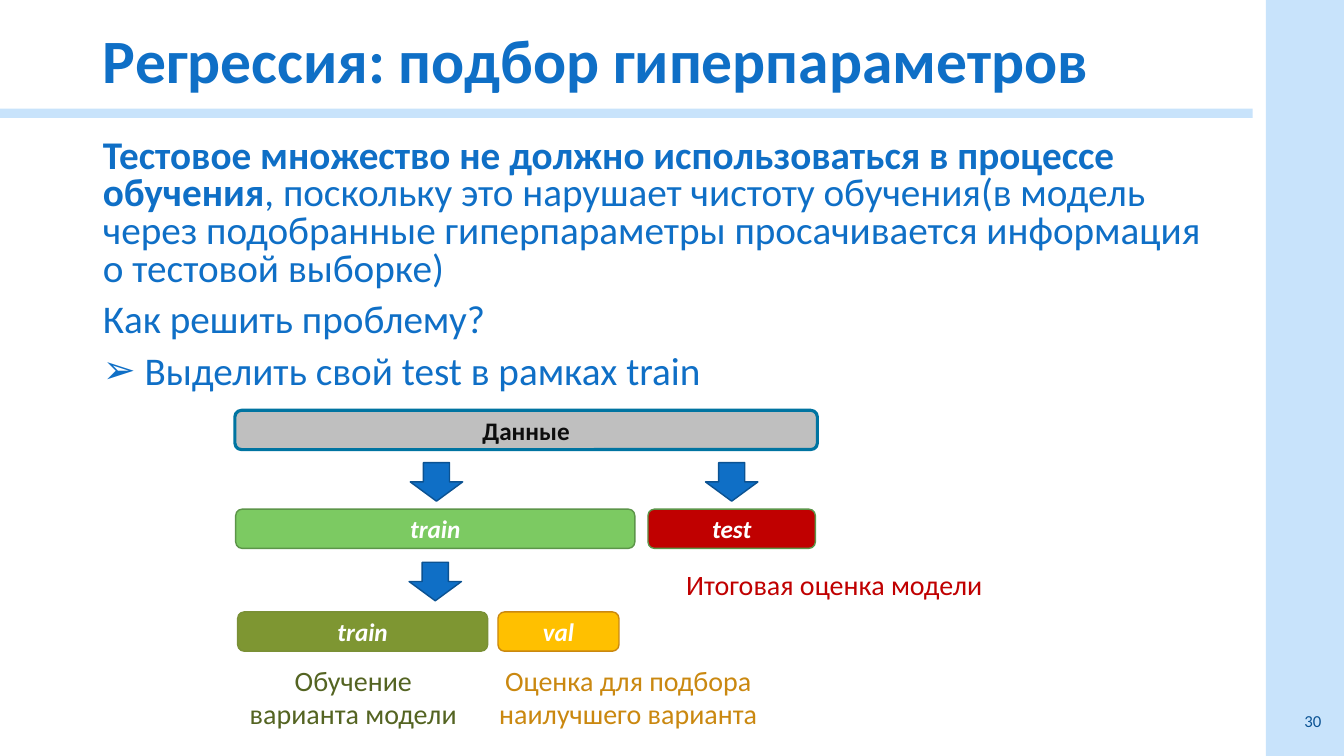
"""Builds a slide on choosing hyperparameters for regression."""
from dataclasses import dataclass

from lxml import etree
from pptx import Presentation
from pptx import util as u
from pptx.dml.color import RGBColor
from pptx.enum import shapes, text
from pptx.oxml.ns import qn


@dataclass(frozen=True)
class Theme:
    font: str = "Calibri"
    blue: str = "0F6FC6"
    blue_edge: str = "0B5292"
    number: str = "0B5394"
    band: str = "C8E3FB"
    white: str = "FFFFFF"
    ink: str = "0D0D0D"
    grey: str = "BFBFBF"
    grey_edge: str = "0074A1"
    green: str = "7CCA62"
    green_edge: str = "5C9549"
    red: str = "C00000"
    olive: str = "7E9632"
    olive_edge: str = "7A9036"
    olive_text: str = "546422"
    amber: str = "FFC000"
    amber_edge: str = "CA8810"
    title_size: int = 44
    body_size: int = 28
    caption_size: int = 20
    block_size: int = 18
    number_size: int = 12


@dataclass(frozen=True)
class Block:
    label: str
    left: float
    top: float
    width: float
    fill: str
    edge: str
    color: str = "FFFFFF"
    italic: bool = True
    weight: float = 1


@dataclass(frozen=True)
class Caption:
    lines: tuple[str, ...]
    left: float
    top: float
    width: float
    height: float
    color: str


T = Theme()
KIND = shapes.MSO_AUTO_SHAPE_TYPE
ALIGN = text.PP_ALIGN
BLOCK_HEIGHT = 0.99
ARROW_SIZE = (1.32, 0.97)
DATA_TOP, SPLIT_TOP, VAL_TOP, CAPTION_TOP = 10.34, 12.83, 15.42, 16.59

BLOCKS = (
    Block("Данные", 5.92, DATA_TOP, 14.68, T.grey, T.grey_edge, T.ink, False, 2.25),
    Block("train", 5.94, SPLIT_TOP, 10.06, T.green, T.green_edge),
    Block("test", 16.33, SPLIT_TOP, 4.22, T.red, T.green_edge),
    Block("train", 5.99, VAL_TOP, 6.3, T.olive, T.olive_edge),
    Block("val", 12.55, VAL_TOP, 3.05, T.amber, T.amber_edge),
)
ARROWS = ((10.34, 11.66), (17.78, 11.66), (10.31, 14.17))
CAPTIONS = (
    Caption(("Обучение", "варианта модели"), 6.02, CAPTION_TOP, 5.77, 1.96, T.olive_text),
    Caption(("Оценка для подбора", "наилучшего варианта"), 12.29, CAPTION_TOP, 7.09, 1.96,
            T.amber_edge),
    Caption(("Итоговая оценка модели",), 17.04, 14.17, 8.05, 1.12, T.red),
)
BODY = (
    (("Тестовое множество не должно использоваться в процессе обучения", True),
     (", поскольку это нарушает чистоту обучения(в модель через подобранные "
      "гиперпараметры просачивается информация о тестовой выборке)", False)),
    (("Как решить проблему?", False),),
    (("Выделить свой test в рамках train", False),),
)


def add_run(p, words: str, *, size: float, color: str, bold: bool = False,
            italic: bool = False) -> None:
    r = p.add_run()
    r.text = words
    r.font.name = T.font
    r.font.size = u.Pt(size)
    r.font.color.rgb = RGBColor.from_string(color)
    r.font.bold = bold
    r.font.italic = italic


def place(sp, left: float, top: float, width: float, height: float) -> None:
    sp.left, sp.top, sp.width, sp.height = map(u.Cm, (left, top, width, height))


def add_shape(s, kind, left: float, top: float, width: float, height: float,
              fill: str, edge: str = "", weight: float = 1):
    sp = s.shapes.add_shape(kind, *map(u.Cm, (left, top, width, height)))
    sp.shadow.inherit = False
    sp.fill.solid()
    sp.fill.fore_color.rgb = RGBColor.from_string(fill)
    if edge:
        sp.line.color.rgb = RGBColor.from_string(edge)
        sp.line.width = u.Pt(weight)
    else:
        sp.line.fill.background()
    return sp


def add_block(s, b: Block) -> None:
    sp = add_shape(s, KIND.ROUNDED_RECTANGLE, b.left, b.top, b.width, BLOCK_HEIGHT,
                   b.fill, b.edge, b.weight)
    tf = sp.text_frame
    tf.vertical_anchor = text.MSO_ANCHOR.MIDDLE
    p = tf.paragraphs[0]
    p.alignment = ALIGN.CENTER
    add_run(p, b.label, size=T.block_size, color=b.color, bold=True, italic=b.italic)


def add_caption(s, c: Caption) -> None:
    sp = s.shapes.add_textbox(*map(u.Cm, (c.left, c.top, c.width, c.height)))
    tf = sp.text_frame
    tf.word_wrap = False
    tf.auto_size = text.MSO_AUTO_SIZE.SHAPE_TO_FIT_TEXT
    for i, line in enumerate(c.lines):
        p = tf.add_paragraph() if i else tf.paragraphs[0]
        p.alignment = ALIGN.CENTER if len(c.lines) > 1 else ALIGN.LEFT
        add_run(p, line, size=T.caption_size, color=c.color)


def set_bullet(p, char: str = "", hang: float = 0) -> None:
    pPr = p._p.get_or_add_pPr()
    pPr.set("marL", str(u.Cm(hang)))
    pPr.set("indent", str(-u.Cm(hang)))
    if char:
        etree.SubElement(pPr, qn("a:buChar")).set("char", char)
    else:
        etree.SubElement(pPr, qn("a:buNone"))


def fill_title(sp) -> None:
    place(sp, 2.34, 0.33, 29.21, 2.54)
    tf = sp.text_frame
    tf.auto_size = text.MSO_AUTO_SIZE.NONE
    tf.vertical_anchor = text.MSO_ANCHOR.MIDDLE
    p = tf.paragraphs[0]
    p.alignment = ALIGN.LEFT
    p.line_spacing = 0.9
    add_run(p, "Регрессия: подбор гиперпараметров", size=T.title_size, color=T.blue, bold=True)


def fill_body(sp) -> None:
    place(sp, 2.34, 3.38, 28.8, 7.34)
    tf = sp.text_frame
    tf.auto_size = text.MSO_AUTO_SIZE.NONE
    for i, runs in enumerate(BODY):
        p = tf.add_paragraph() if i else tf.paragraphs[0]
        last = i == len(BODY) - 1
        set_bullet(p, "➢" if last else "", 1.05 if last else 0)
        p.line_spacing = 0.8
        p.space_before = u.Pt(10 if i else 0)
        for words, bold in runs:
            add_run(p, words, size=T.body_size, color=T.blue, bold=bold)


def add_number(s, number: str) -> None:
    tf = s.shapes.add_textbox(*map(u.Cm, (25.93, 17.65, 7.62, 1.02))).text_frame
    tf.word_wrap = True
    tf.vertical_anchor = text.MSO_ANCHOR.MIDDLE
    p = tf.paragraphs[0]
    p.alignment = ALIGN.RIGHT
    add_run(p, number, size=T.number_size, color=T.number)


def main() -> None:
    prs = Presentation()
    prs.slide_width, prs.slide_height = u.Cm(33.87), u.Cm(19.05)
    s = prs.slides.add_slide(prs.slide_layouts[1])
    add_shape(s, KIND.RECTANGLE, 31.9, 0, 1.97, 19.05, T.band)
    add_shape(s, KIND.RECTANGLE, 0, 2.74, 31.57, 0.23, T.band)
    fill_title(s.shapes.title)
    fill_body(s.placeholders[1])
    add_number(s, "30")
    for b in BLOCKS:
        add_block(s, b)
    for left, top in ARROWS:
        add_shape(s, KIND.DOWN_ARROW, left, top, *ARROW_SIZE, T.blue, T.blue_edge)
    for c in CAPTIONS:
        add_caption(s, c)
    prs.save("out.pptx")


if __name__ == "__main__":
    main()
